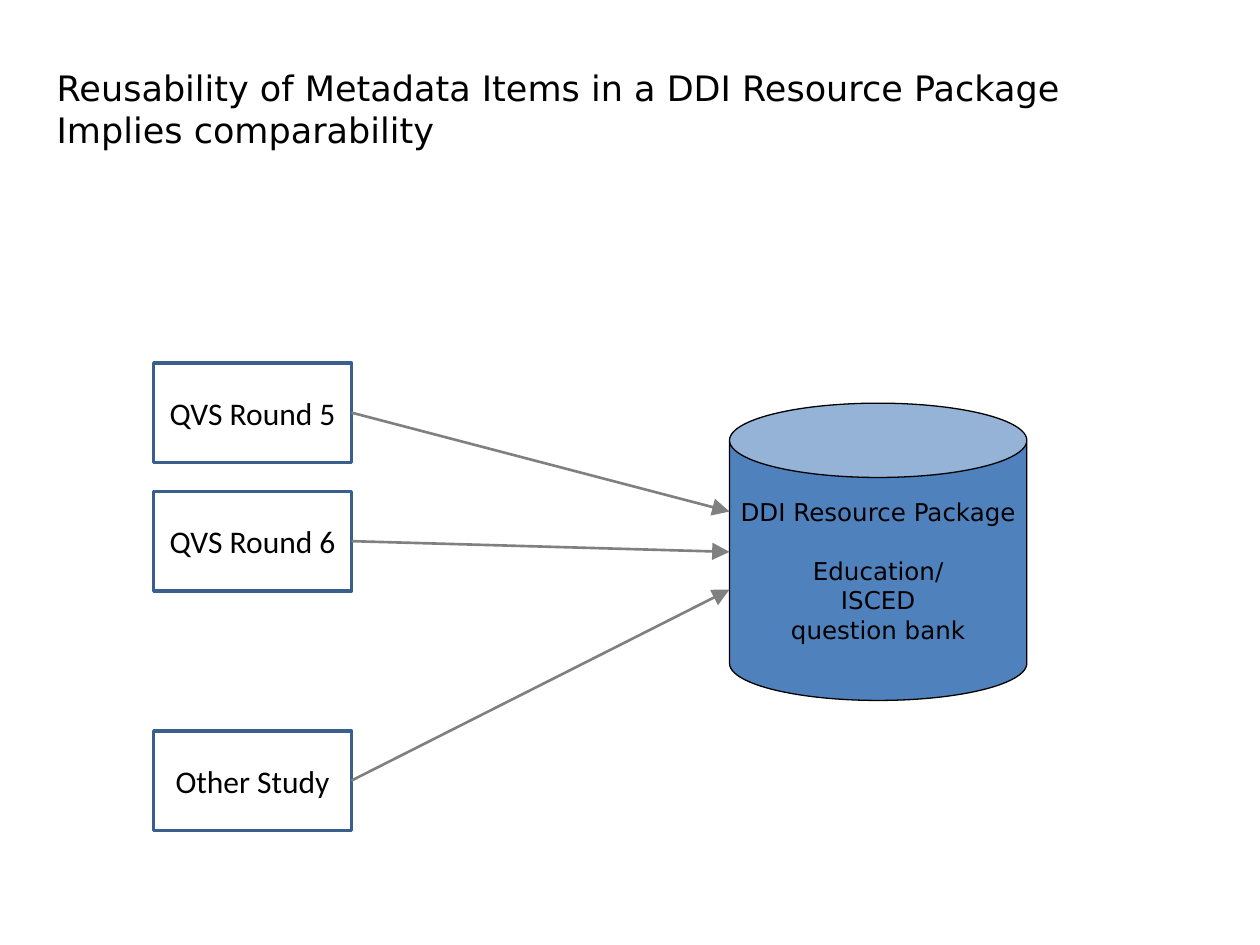
from lxml import etree
from pptx import Presentation
from pptx.dml.color import RGBColor
from pptx.enum import shapes, text
from pptx.oxml.ns import qn
from pptx.util import Inches, Pt

BOX_LEFT, BOX_WIDTH, BOX_HEIGHT = 1.22, 1.57, 0.79
BANK_LEFT, BANK_TOP, BANK_SIZE = 5.79, 3.2, 2.36
RIGHT_SIDE = 3

# Study, top of its box, height at which its arrow meets the bank
STUDIES = [
    ("QVS Round 5", 2.88, 4.06),
    ("QVS Round 6", 3.9, 4.38),
    ("Other Study", 5.8, 4.68),
]


def color(hex_value):
    return RGBColor.from_string(hex_value)


def write(shape, lines, size, font="DejaVu Sans", align=text.PP_ALIGN.CENTER,
          anchor=text.MSO_ANCHOR.MIDDLE, wrap=True, gaps=None):
    """Fill the shape with one paragraph per line; gaps maps a line index to points above it."""
    frame = shape.text_frame
    frame.word_wrap = wrap
    frame.vertical_anchor = anchor
    for index, line in enumerate(lines):
        paragraph = frame.add_paragraph() if index else frame.paragraphs[0]
        paragraph.alignment = align
        paragraph.space_before = Pt((gaps or {}).get(index, 0))
        run = paragraph.add_run()
        run.text = line
        run.font.name = font
        run.font.size = Pt(size)
        run.font.color.rgb = color("000000")


def add_title(slide, lines):
    title = slide.shapes.title
    title.left, title.top = Inches(0.35), Inches(0.48)
    title.width, title.height = Inches(8.3), Inches(0.77)
    write(title, lines, 20, align=text.PP_ALIGN.LEFT,
          anchor=text.MSO_ANCHOR.TOP, wrap=False)


def add_bank(slide, lines, gaps):
    bank = slide.shapes.add_shape(
        shapes.MSO_SHAPE.CAN, Inches(BANK_LEFT), Inches(BANK_TOP),
        Inches(BANK_SIZE), Inches(BANK_SIZE))
    bank.shadow.inherit = False
    bank.fill.solid()
    bank.fill.fore_color.rgb = color("4F81BD")
    bank.line.color.rgb = color("000000")
    bank.line.width = Pt(0.75)
    write(bank, lines, 14, wrap=False, gaps=gaps)


def add_study(slide, name, top):
    study = slide.shapes.add_shape(
        shapes.MSO_SHAPE.RECTANGLE, Inches(BOX_LEFT), Inches(top),
        Inches(BOX_WIDTH), Inches(BOX_HEIGHT))
    study.shadow.inherit = False
    study.fill.background()
    study.line.color.rgb = color("3A5F8C")
    study.line.width = Pt(2)
    write(study, [name], 18, font="Calibri")
    return study


def add_arrow(slide, study, end_y):
    """Point from the study's right side to the left wall of the bank."""
    arrow = slide.shapes.add_connector(
        shapes.MSO_CONNECTOR.STRAIGHT, study.left + study.width,
        study.top + study.height // 2, Inches(BANK_LEFT), Inches(end_y))
    arrow.begin_connect(study, RIGHT_SIDE)
    arrow.line.color.rgb = color("808080")
    arrow.line.width = Pt(1.5)
    etree.SubElement(arrow.line._get_or_add_ln(), qn("a:tailEnd"),
                     type="triangle", w="lg", len="lg")
    etree.SubElement(arrow._element.spPr, qn("a:effectLst"))


def main():
    deck = Presentation()
    deck.slide_width, deck.slide_height = Inches(10), Inches(7.5)
    slide = deck.slides.add_slide(deck.slide_layouts[5])

    add_title(slide, ["Reusability of Metadata Items in a DDI Resource Package",
                      "Implies comparability"])
    add_bank(slide, ["DDI Resource Package", "Education/", "ISCED", "question bank"],
             gaps={1: 17})
    boxes = [add_study(slide, name, top) for name, top, _ in STUDIES]
    for box, (_, _, end_y) in zip(boxes, STUDIES):
        add_arrow(slide, box, end_y)

    deck.save("out.pptx")


if __name__ == "__main__":
    main()
